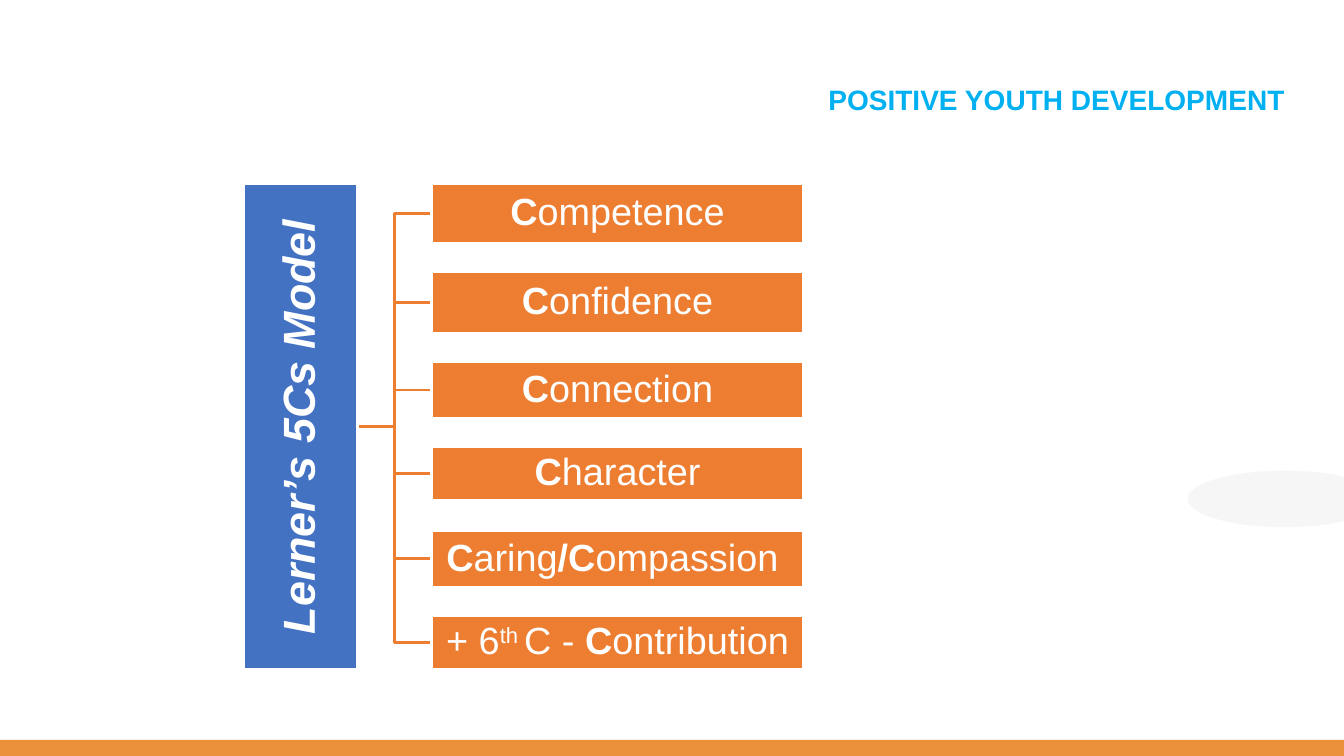
from dataclasses import dataclass

from lxml import etree
from pptx import Presentation
from pptx import util as u
from pptx.dml.color import RGBColor
from pptx.enum import shapes, text
from pptx.oxml.ns import qn

RECT = shapes.MSO_SHAPE.RECTANGLE
OVAL = shapes.MSO_SHAPE.OVAL
ALIGN = text.PP_ALIGN


@dataclass(frozen=True)
class Theme:
    font: str = "Arial"
    white: str = "FFFFFF"
    sky: str = "00B0F0"
    blue: str = "4372C3"
    orange: str = "ED7D31"
    amber: str = "EA9139"
    mist: str = "F5F5F5"
    head: float = 20
    root: float = 32
    leaf: float = 27
    line: float = 2


def rgb(code):
    return RGBColor.from_string(code)


def write(frame, runs, font, size, color, align=ALIGN.CENTER,
          anchor=text.MSO_ANCHOR.MIDDLE, pad=(0.02, 0.02), italic=False):
    """Fill a frame with (words, style) runs; style: b bold, s superscript."""
    frame.word_wrap = True
    frame.vertical_anchor = anchor
    frame.margin_left = frame.margin_right = u.Inches(pad[0])
    frame.margin_top = frame.margin_bottom = u.Inches(pad[1])
    para = frame.paragraphs[0]
    para.alignment = align
    para.line_spacing = 0.9
    for words, style in runs:
        run = para.add_run()
        run.text = words
        run.font.name = font
        run.font.size = u.Pt(size)
        run.font.bold = "b" in style
        run.font.italic = italic
        run.font.color.rgb = rgb(color)
        if "s" in style:
            run._r.get_or_add_rPr().set("baseline", "30000")


class Page:
    def __init__(self, slide, theme):
        self.items = slide.shapes
        self.theme = theme

    def shape(self, kind, box, fill, line=None, alpha=None):
        item = self.items.add_shape(kind, *map(u.Inches, box))
        item.shadow.inherit = False
        item.fill.solid()
        item.fill.fore_color.rgb = rgb(fill)
        if alpha:
            tint = item._element.spPr.find(".//" + qn("a:srgbClr"))
            etree.SubElement(tint, qn("a:alpha")).set("val", str(alpha * 1000))
        if line:
            item.line.color.rgb = rgb(line)
            item.line.width = u.Pt(self.theme.line)
        else:
            item.line.fill.background()
        return item

    def label(self, box, runs, **look):
        item = self.items.add_textbox(*map(u.Inches, box))
        write(item.text_frame, runs, self.theme.font, **look)

    def block(self, box, runs, fill, size, turn=0, italic=False):
        item = self.shape(RECT, box, fill, self.theme.white)
        item.rotation = turn
        write(item.text_frame, runs, self.theme.font, size, self.theme.white,
              italic=italic)

    def branch(self, start, end):
        """Draw a right-angled line that bends halfway across."""
        mid = (start[0] + end[0]) / 2
        spots = [start, (mid, start[1]), (mid, end[1]), end]
        first, *rest = [(u.Inches(x), u.Inches(y)) for x, y in spots]
        pen = self.items.build_freeform(*first)
        pen.add_line_segments(rest, close=False)
        item = pen.convert_to_shape()
        item.shadow.inherit = False
        item.fill.background()
        item.line.color.rgb = rgb(self.theme.orange)
        item.line.width = u.Pt(self.theme.line)


LEAVES = [
    (1.82, 0.59, [("C", "b"), ("ompetence", "")]),
    (2.69, 0.62, [("C", "b"), ("onfidence", "")]),
    (3.59, 0.56, [("C", "b"), ("onnection", "")]),
    (4.43, 0.54, [("C", "b"), ("haracter", "")]),
    (5.26, 0.57, [("C", "b"), ("aring", ""), ("/C", "b"), ("ompassion ", "")]),
    (6.11, 0.53, [("+ 6", ""), ("th ", "s"), ("C - ", ""), ("C", "b"),
                  ("ontribution", "")]),
]


def main():
    deck = Presentation()
    deck.slide_width, deck.slide_height = u.Inches(13.33), u.Inches(7.5)
    theme = Theme()
    page = Page(deck.slides.add_slide(deck.slide_layouts[6]), theme)

    page.shape(OVAL, (11.78, 4.67, 1.92, 0.56), theme.mist, alpha=88)
    page.shape(RECT, (0, 7.34, 13.33, 0.16), theme.amber)
    page.label((3.34, 0.81, 9.5, 0.92), [("POSITIVE YOUTH DEVELOPMENT", "b")],
               size=theme.head, color=theme.sky, align=ALIGN.RIGHT,
               anchor=text.MSO_ANCHOR.TOP, pad=(0.1, 0.05))

    left, width = 4.28, 3.69
    for top, height, _ in reversed(LEAVES):
        page.branch((3.54, 4.23), (left, top + height / 2))
    page.block((0.57, 3.67, 4.82, 1.13), [("Lerner’s 5Cs Model", "b")],
               theme.blue, theme.root, turn=270, italic=True)
    for top, height, runs in LEAVES:
        page.block((left, top, width, height), runs, theme.orange, theme.leaf)

    deck.save("out.pptx")


if __name__ == "__main__":
    main()
